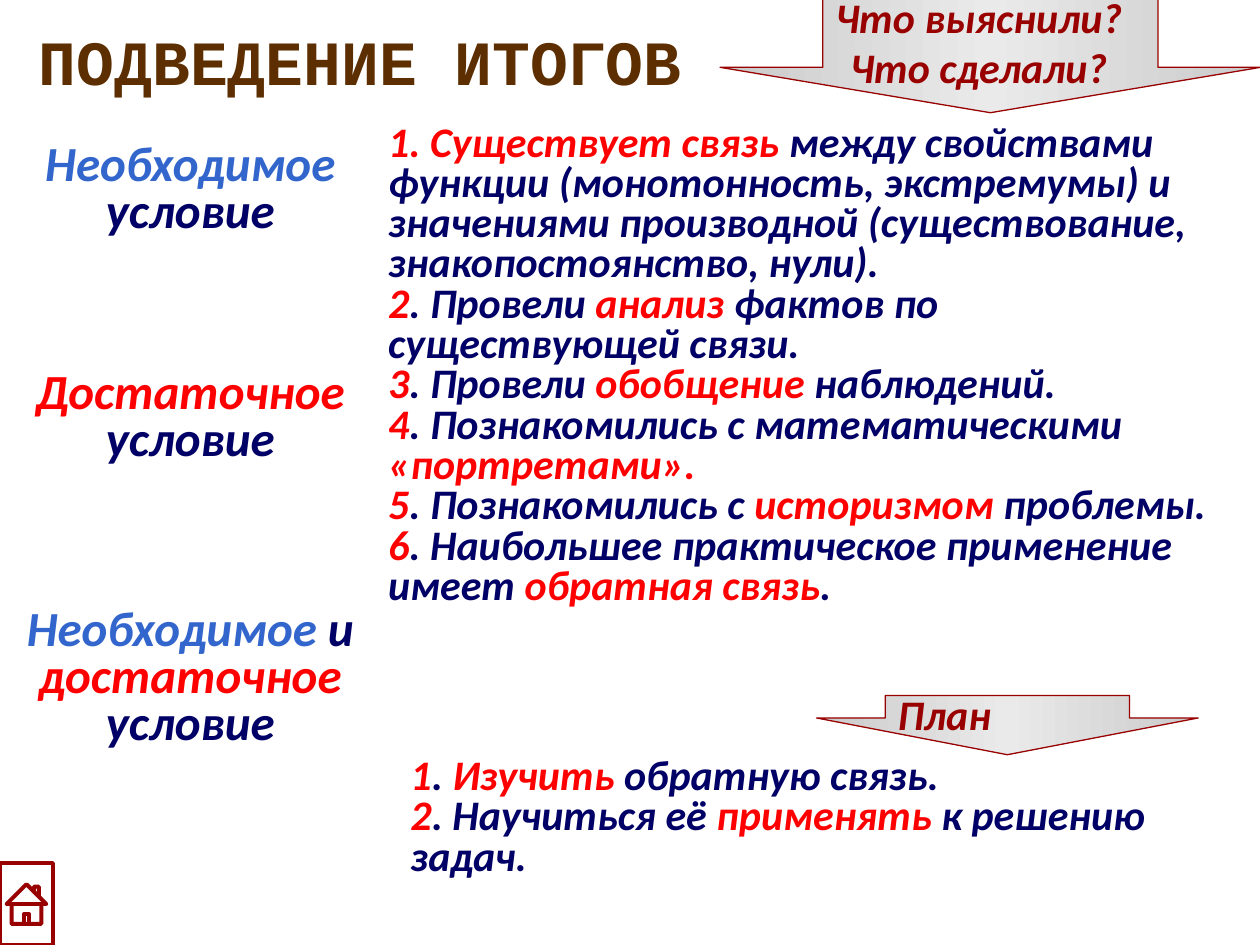
from copy import deepcopy
from dataclasses import dataclass
from itertools import cycle

from pptx import Presentation
from pptx.dml.color import RGBColor
from pptx.enum import shapes, text
from pptx.oxml import ns, xmlchemy
from pptx.util import Inches, Pt

WIDTH, HEIGHT = 10, 7.5
COLUMNS, ROWS = 100, 75
NAVY, RED, BLUE, MAROON, BROWN = "000066", "FF0000", "3366CC", "990000", "5C2E00"
SILVER = ("CACACA", "EAEAEA", "CACACA")


@dataclass
class Frame:
    """A place on the slide, in grid columns and rows."""
    left: float
    top: float
    width: float
    height: float

    def lengths(self) -> tuple:
        column, row = WIDTH / COLUMNS, HEIGHT / ROWS
        return (Inches(self.left * column), Inches(self.top * row),
                Inches(self.width * column), Inches(self.height * row))


@dataclass
class Passage:
    """Paragraphs whose parts, split by |, take the palette's colours in turn."""
    frame: Frame
    lines: tuple
    palette: tuple = (RED, NAVY)
    size: int = 24
    align: int = text.PP_ALIGN.LEFT


@dataclass
class Banner:
    """A right arrow turned to point down."""
    frame: Frame
    adjustments: tuple
    lines: tuple


CONDITIONS = [
    Passage(Frame(0, top, 30.2, height), (line,), palette, 28, text.PP_ALIGN.CENTER)
    for top, height, line, palette in (
        (10.9, 8.5, "Необходимое| условие", (BLUE, NAVY)),
        (29, 8.5, "Достаточное| условие", (RED, NAVY)),
        (47.8, 15.9, "Необходимое |и| достаточное| условие", (BLUE, NAVY, RED, NAVY)),
    )
]
FINDINGS = Passage(Frame(29.8, 9.4, 67.9, 45.7), (
    "1. Существует связь| между свойствами функции (монотонность, экстремумы) "
    "и значениями производной (существование, знакопостоянство, нули).",
    "2|. Провели |анализ| фактов по существующей связи.",
    "3|. Провели |обобщение| наблюдений.",
    "4|. Познакомились с математическими |«портретами».",
    "5|. Познакомились с |историзмом| проблемы.",
    "6|. Наибольшее практическое применение имеет |обратная связь|.",
))
PLAN = Passage(Frame(31.6, 59.7, 68.4, 10.6), (
    "1|. |Изучить| обратную связь.",
    "2|. Научиться её |применять| к решению задач.",
))
BANNERS = [
    Banner(Frame(74.1, -17, 9, 42.9), (0.62, 0.4), ("Что выяснили?", "Что сделали?")),
    Banner(Frame(77.6, 42.4, 4.7, 30.3), (0.64, 0.62), ("План",)),
]


def colour(value: str) -> RGBColor:
    return RGBColor.from_string(value)


def apply(target, values: dict) -> None:
    for name, value in values.items():
        setattr(target, name, value)


def place(shape, frame: Frame) -> None:
    apply(shape, dict(zip(("left", "top", "width", "height"), frame.lengths())))


def write(box, lines: tuple, palette: tuple, size: int, align: int,
          spacing: float = 1.0, name: str = "Calibri", italic: bool = True) -> None:
    for index, line in enumerate(lines):
        para = box.paragraphs[0] if index == 0 else box.add_paragraph()
        apply(para, {"alignment": align, "line_spacing": spacing, "space_before": Pt(0)})
        for words, shade in zip(line.split("|"), cycle(palette)):
            span = para.add_run()
            span.text = words
            apply(span.font, {"name": name, "size": Pt(size), "bold": True, "italic": italic})
            span.font.color.rgb = colour(shade)


def fill_passage(shape, passage: Passage) -> None:
    place(shape, passage.frame)
    apply(shape.text_frame, {"word_wrap": True,
                             "auto_size": text.MSO_AUTO_SIZE.SHAPE_TO_FIT_TEXT})
    write(shape.text_frame, passage.lines, passage.palette, passage.size, passage.align, 0.8)


def remove_bullets(box) -> None:
    for para in box.paragraphs:
        properties = para._p.get_or_add_pPr()
        apply_indent = {"marL": "0", "indent": "0"}
        for name, value in apply_indent.items():
            properties.set(name, value)
        properties.append(xmlchemy.OxmlElement("a:buNone"))


def fill_gradient(shape, shades: tuple, angle: float) -> None:
    shape.fill.gradient()
    shape.fill.gradient_angle = angle
    stop_list = shape._element.spPr.find(".//" + ns.qn("a:gsLst"))
    stop_list.append(deepcopy(stop_list[0]))
    for index, (stop, shade) in enumerate(zip(shape.fill.gradient_stops, shades)):
        stop.position = index / (len(shades) - 1)
        stop.color.rgb = colour(shade)


def outline(shape, width: float) -> None:
    shape.shadow.inherit = False
    shape.line.color.rgb = colour(MAROON)
    shape.line.width = Pt(width)


def draw_banner(page, banner: Banner) -> None:
    arrow = page.shapes.add_shape(shapes.MSO_SHAPE.RIGHT_ARROW, *banner.frame.lengths())
    arrow.rotation = 90
    for index, value in enumerate(banner.adjustments):
        arrow.adjustments[index] = value
    fill_gradient(arrow, SILVER, 90)
    outline(arrow, 0.75)
    box = arrow.text_frame
    apply(box, {"word_wrap": False, "vertical_anchor": text.MSO_ANCHOR.MIDDLE})
    # The text is turned back so that it reads level inside the turned arrow.
    box._txBody.bodyPr.set("rot", "10800000")
    box._txBody.bodyPr.set("vert", "eaVert")
    write(box, banner.lines, (MAROON,), 24, text.PP_ALIGN.CENTER)


def main() -> None:
    deck = Presentation()
    apply(deck, {"slide_width": Inches(WIDTH), "slide_height": Inches(HEIGHT)})
    page = deck.slides.add_slide(deck.slide_layouts[1])

    title = page.shapes.title
    place(title, Frame(1.8, 1.6, 53.6, 6.4))
    apply(title.text_frame, {"word_wrap": False, "auto_size": text.MSO_AUTO_SIZE.NONE})
    write(title.text_frame, ("ПОДВЕДЕНИЕ ИТОГОВ",), (BROWN,), 36, text.PP_ALIGN.CENTER,
          name="Courier New", italic=False)

    findings = page.placeholders[1]
    fill_passage(findings, FINDINGS)
    remove_bullets(findings.text_frame)

    for passage in (*CONDITIONS, PLAN):
        fill_passage(page.shapes.add_textbox(*passage.frame.lengths()), passage)
    for banner in BANNERS:
        draw_banner(page, banner)

    home = page.shapes.add_shape(shapes.MSO_SHAPE.ACTION_BUTTON_HOME,
                                 *Frame(0, 68.5, 4.2, 6.5).lengths())
    home.fill.background()
    outline(home, 2.25)
    deck.save("out.pptx")


if __name__ == "__main__":
    main()
